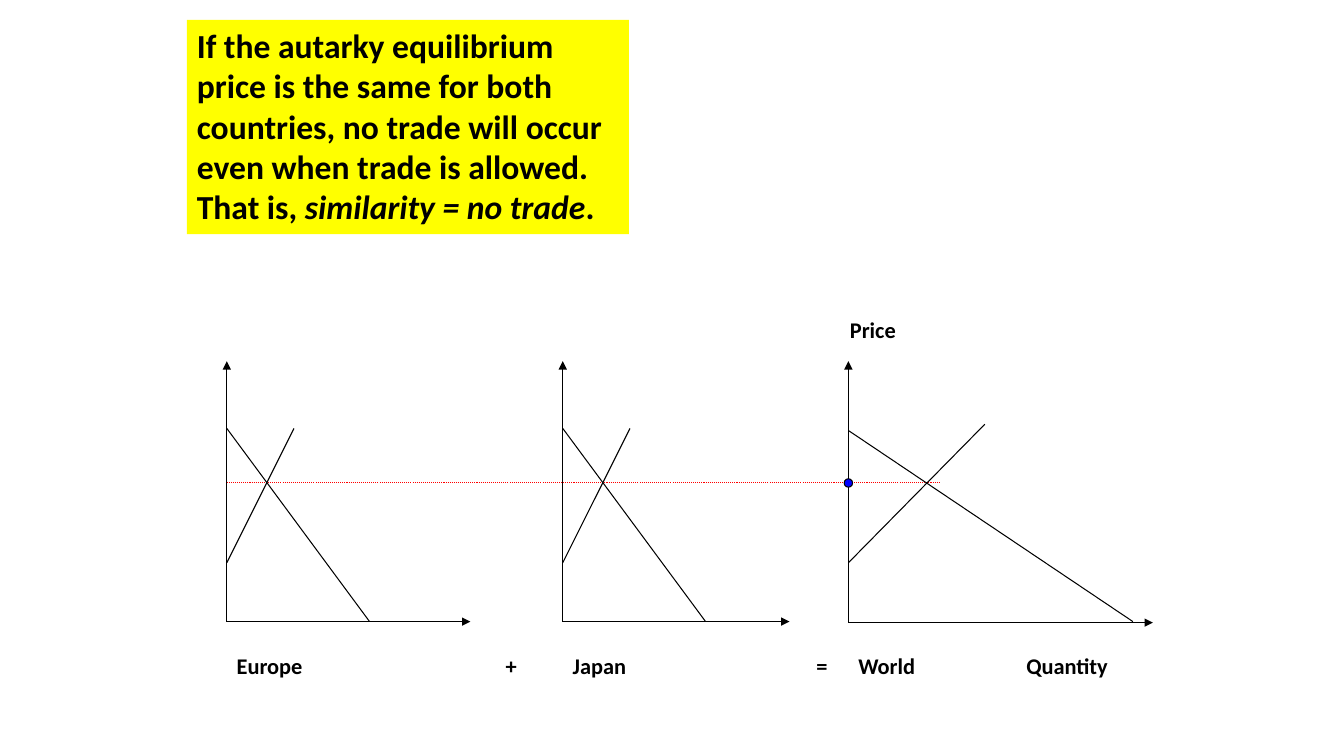
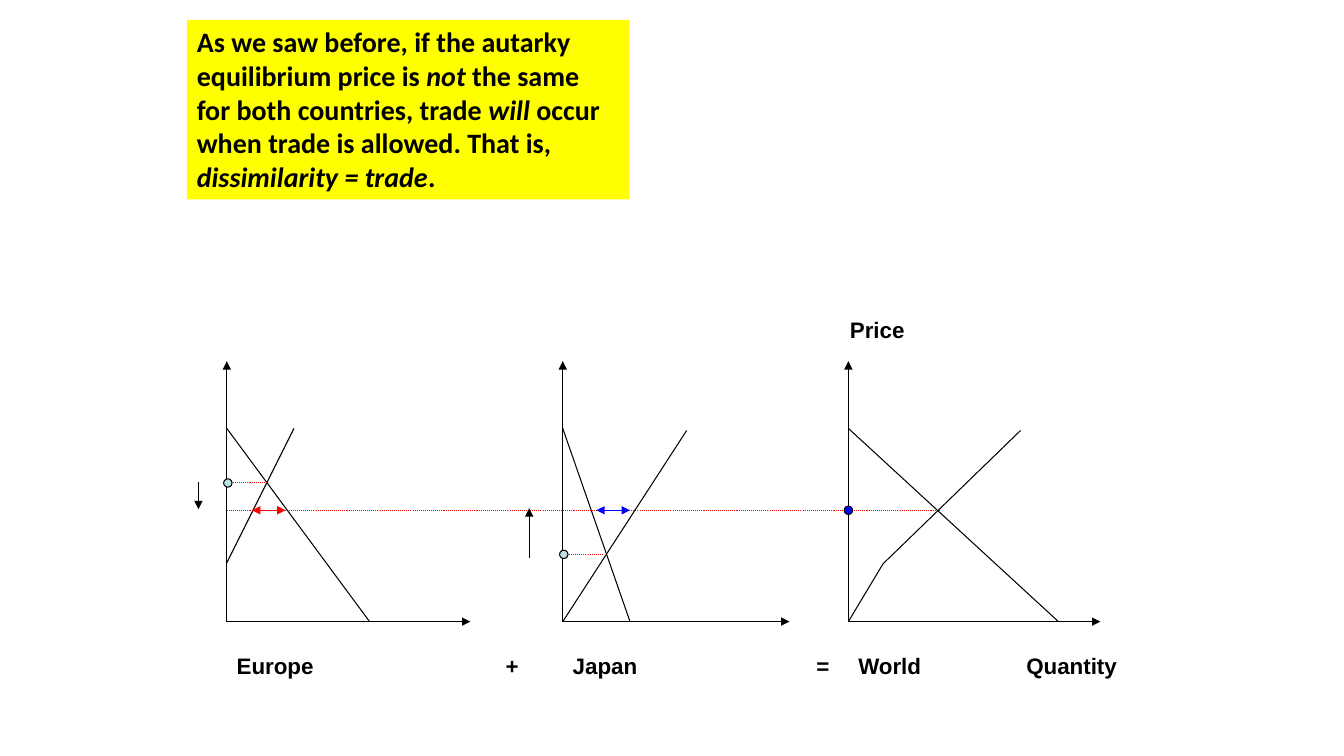
from dataclasses import dataclass
from typing import Optional

from pptx import Presentation
from pptx import util as u
from pptx.dml.color import RGBColor
from pptx.enum import dml, shapes, text
from pptx.oxml import ns, xmlchemy
from pptx.slide import Slide

EMU_PER_PX = 9525
BLACK = RGBColor(0x00, 0x00, 0x00)
RED = RGBColor(0xFF, 0x00, 0x00)
BLUE = RGBColor(0x00, 0x00, 0xFF)
PALE_BLUE = RGBColor(0xBB, 0xE0, 0xE3)
YELLOW = RGBColor(0xFF, 0xFF, 0x00)

EUROPE_X, JAPAN_X, WORLD_X = 216, 536, 808
AXIS_TOP, AXIS_BASE = 344, 592
PRICE_LINE_END = 896
LABEL_Y, LABEL_H = 616, 36
DOT = 8


@dataclass(frozen=True)
class Line:
    x1: int
    y1: int
    x2: int
    y2: int
    color: RGBColor = BLACK
    width: float = 0.75
    dotted: bool = False
    head: bool = False
    tail: bool = False


@dataclass(frozen=True)
class Dot:
    x: int
    y: int
    fill: RGBColor


@dataclass(frozen=True)
class Label:
    words: str
    x: int
    y: int
    w: int


@dataclass(frozen=True)
class Market:
    x: int
    end: int
    demand: tuple[tuple[int, int], ...]
    supply: tuple[tuple[int, int], ...]
    base: int = AXIS_BASE


@dataclass(frozen=True)
class Diagram:
    message: tuple[str, ...]
    message_size: int
    message_h: int
    label_font: str
    markets: tuple[Market, ...]
    price: int
    marks: tuple[Line, ...] = ()
    dots: tuple[Dot, ...] = ()


LABELS = (
    Label("Price", 800, 296, 80),
    Label("Europe", EUROPE_X, LABEL_Y, 96),
    Label("+", 472, LABEL_Y, 32),
    Label("Japan", JAPAN_X, LABEL_Y, 96),
    Label("=", 768, LABEL_Y, 32),
    Label("World", WORLD_X, LABEL_Y, 96),
    Label("Quantity", 968, LABEL_Y, 128),
)

EUROPE = Market(EUROPE_X, 448, ((216, 408), (352, 592)), ((216, 536), (280, 408)))

SAME_PRICE = Diagram(
    message=(
        "If the autarky equilibrium price is the same for both countries, "
        "no trade will occur even when trade is allowed. That is, ",
        "similarity = no trade",
        ".",
    ),
    message_size=24,
    message_h=204,
    label_font="Calibri",
    markets=(
        EUROPE,
        Market(JAPAN_X, 752, ((536, 408), (672, 592)), ((536, 536), (600, 408))),
        Market(WORLD_X, 1098, ((808, 410), (1079, 592)), ((808, 536), (938, 404)), 593),
    ),
    price=460,
)

TRADE_PRICE = 486
DIFFERENT_PRICES = Diagram(
    message=(
        "As we saw before, if the autarky equilibrium price is ",
        "not",
        " the same for both countries, trade ",
        "will",
        " occur when trade is allowed. That is, ",
        "dissimilarity = trade",
        ".",
    ),
    message_size=20,
    message_h=171,
    label_font="Arial",
    markets=(
        EUROPE,
        Market(JAPAN_X, 752, ((536, 408), (600, 592)), ((536, 592), (654, 410))),
        Market(WORLD_X, 1048, ((808, 408), (1008, 592)),
               ((808, 592), (841, 537), (972, 410))),
    ),
    price=TRADE_PRICE,
    marks=(
        Line(240, TRADE_PRICE, 272, TRADE_PRICE, RED, 1, head=True, tail=True),
        Line(568, TRADE_PRICE, 600, TRADE_PRICE, BLUE, 1, head=True, tail=True),
        Line(EUROPE_X, 460, 254, 460, RED, dotted=True),
        Line(JAPAN_X, 528, 575, 528, RED, dotted=True),
        Line(189, 459, 189, 485, tail=True),
        Line(504, 531, 504, 484, tail=True),
    ),
    dots=(Dot(217, 460, PALE_BLUE), Dot(537, 528, PALE_BLUE)),
)


def px(n: int) -> u.Emu:
    return u.Emu(n * EMU_PER_PX)


def add_run(p, words: str, *, size: int, font: str, bold: bool = True,
            italic: bool = False, color: RGBColor = BLACK) -> None:
    r = p.add_run()
    r.text = words
    r.font.size = u.Pt(size)
    r.font.name = font
    r.font.bold = bold
    r.font.italic = italic
    r.font.color.rgb = color


def draw_line(s: Slide, line: Line) -> None:
    sp = s.shapes.add_connector(
        shapes.MSO_CONNECTOR.STRAIGHT,
        px(line.x1), px(line.y1), px(line.x2), px(line.y2))
    sp.line.color.rgb = line.color
    sp.line.width = u.Pt(line.width)
    if line.dotted:
        sp.line.dash_style = dml.MSO_LINE.ROUND_DOT
    ln = sp.line._get_or_add_ln()
    for shown, tag in ((line.head, "a:headEnd"), (line.tail, "a:tailEnd")):
        if shown:
            end = xmlchemy.OxmlElement(tag)
            end.set("type", "triangle")
            ln.append(end)
    sp._element.find(ns.qn("p:spPr")).append(xmlchemy.OxmlElement("a:effectLst"))


def draw_dot(s: Slide, dot: Dot) -> None:
    sp = s.shapes.add_shape(
        shapes.MSO_SHAPE.OVAL, px(dot.x - DOT // 2), px(dot.y - DOT // 2), px(DOT), px(DOT))
    sp.shadow.inherit = False
    sp.fill.solid()
    sp.fill.fore_color.rgb = dot.fill
    sp.line.color.rgb = BLACK
    sp.line.width = u.Pt(0.75)


def draw_label(s: Slide, label: Label, font: str) -> None:
    tf = s.shapes.add_textbox(px(label.x), px(label.y), px(label.w), px(LABEL_H)).text_frame
    tf.word_wrap = True
    add_run(tf.paragraphs[0], label.words, size=16, font=font)


def draw_market(s: Slide, market: Market) -> None:
    draw_line(s, Line(market.x, market.base, market.x, AXIS_TOP, tail=True))
    draw_line(s, Line(market.x, market.base, market.end, market.base, tail=True))
    for curve in (market.demand, market.supply):
        for start, end in zip(curve, curve[1:]):
            draw_line(s, Line(*start, *end))


def draw_message(s: Slide, diagram: Diagram) -> None:
    sp = s.shapes.add_shape(
        shapes.MSO_SHAPE.RECTANGLE, px(178), px(19), px(421), px(diagram.message_h))
    sp.shadow.inherit = False
    sp.fill.solid()
    sp.fill.fore_color.rgb = YELLOW
    sp.line.fill.background()
    tf = sp.text_frame
    tf.word_wrap = True
    tf.vertical_anchor = text.MSO_ANCHOR.TOP
    p = tf.paragraphs[0]
    p.alignment = text.PP_ALIGN.LEFT
    for i, words in enumerate(diagram.message):
        add_run(p, words, size=diagram.message_size, font="Calibri", italic=i % 2 == 1)


def draw_diagram(s: Slide, diagram: Diagram) -> None:
    price_line = Line(EUROPE_X, diagram.price, PRICE_LINE_END, diagram.price, RED, dotted=True)
    draw_line(s, price_line)
    for market in diagram.markets:
        draw_market(s, market)
    for mark in diagram.marks:
        draw_line(s, mark)
    for dot in (*diagram.dots, Dot(WORLD_X, diagram.price, BLUE)):
        draw_dot(s, dot)
    for label in LABELS:
        draw_label(s, label, diagram.label_font)
    draw_message(s, diagram)


def main() -> None:
    prs = Presentation()
    prs.slide_width, prs.slide_height = px(1280), px(720)
    for diagram in (SAME_PRICE, DIFFERENT_PRICES):
        draw_diagram(prs.slides.add_slide(prs.slide_layouts[6]), diagram)
    prs.save("out.pptx")


if __name__ == "__main__":
    main()
